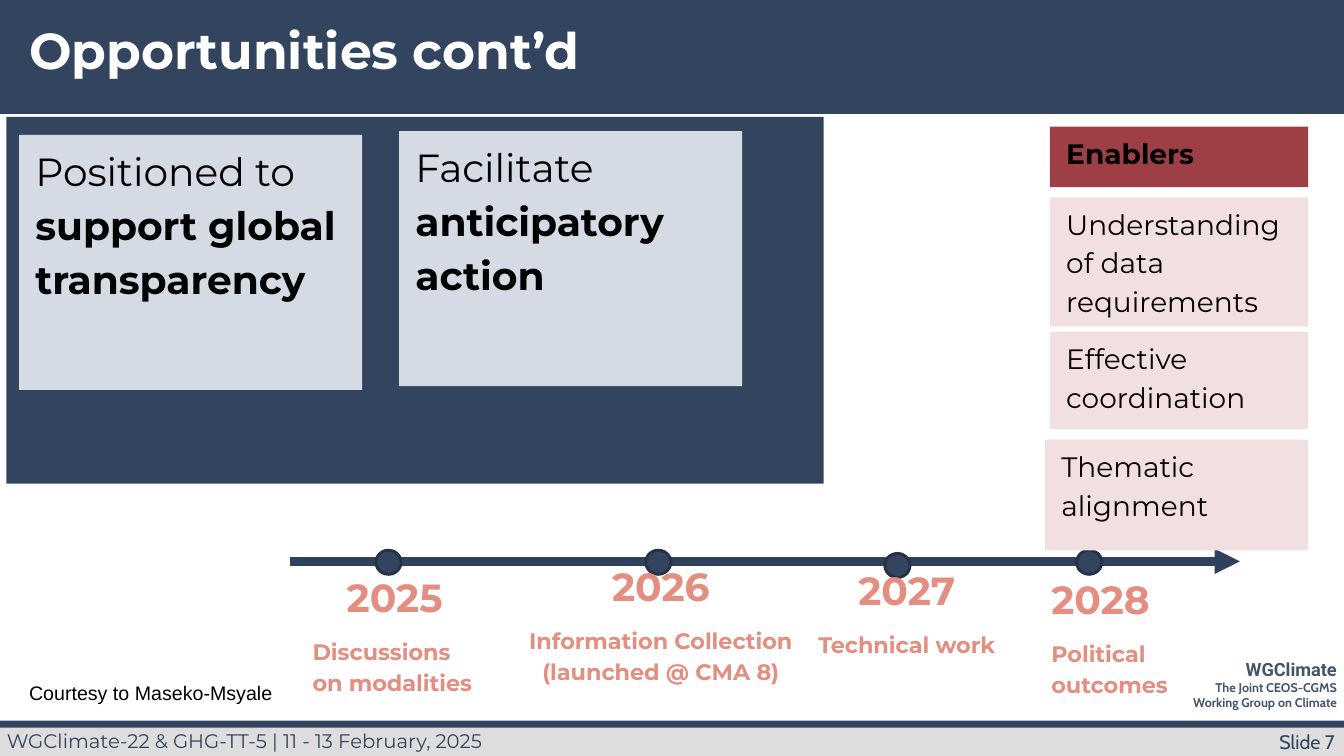
import pptx
import pptx.util
import pptx.dml.color
import pptx.enum.shapes
import pptx.enum.text
import pptx.oxml.ns
from lxml import etree
from dataclasses import dataclass

Pt = pptx.util.Pt
SHAPE = pptx.enum.shapes.MSO_SHAPE
ALIGN = pptx.enum.text.PP_ALIGN


@dataclass(frozen=True)
class Theme:
    navy: str = "33445F"
    axis: str = "2F415D"
    dot_edge: str = "253145"
    slate: str = "44546A"
    grey: str = "DDDDDD"
    pale_blue: str = "D5DBE5"
    pale_red: str = "F2DFE0"
    red: str = "9D3F44"
    coral: str = "E38E80"
    white: str = "FFFFFF"
    black: str = "000000"
    font: str = "Montserrat"
    title: int = 36
    large: int = 28
    medium: int = 20
    label: int = 16
    small: int = 14
    group: int = 13
    tiny: int = 9


THEME = Theme()


def rgb(value):
    return pptx.dml.color.RGBColor.from_string(value)


def add_text(tf, text, size=THEME.small, color=THEME.black, font=THEME.font,
             bold=False, align=ALIGN.LEFT, spacing=None, before=0, indent=0,
             same_line=False):
    """Add text as a new paragraph, or to the last one if same_line is set."""
    p = tf.paragraphs[-1]
    if p.runs and not same_line:
        p = tf.add_paragraph()
    if not same_line:
        p.alignment = align
        p.space_before = Pt(before)
        if spacing:
            p.line_spacing = spacing
        if indent:
            p._p.get_or_add_pPr().set("marL", str(Pt(indent)))
    r = p.add_run()
    r.text = text
    r.font.name = font
    r.font.size = Pt(size)
    r.font.bold = bold
    r.font.color.rgb = rgb(color)


class SlideBuilder:
    def __init__(self, slide, theme):
        self.s = slide
        self.theme = theme
        self.body = dict(spacing=1.15, indent=4.5)

    def shape(self, x, y, w, h, fill, kind=SHAPE.RECTANGLE, edge=None):
        sp = self.s.shapes.add_shape(kind, Pt(x), Pt(y), Pt(w), Pt(h))
        sp.shadow.inherit = False
        sp.fill.solid()
        sp.fill.fore_color.rgb = rgb(fill)
        if edge:
            sp.line.color.rgb = rgb(edge)
            sp.line.width = Pt(2)
        else:
            sp.line.fill.background()
        return sp

    def card(self, x, y, w, h, fill, text, size, bold=False, strong=None):
        tf = self.shape(x, y, w, h, fill).text_frame
        tf.word_wrap = True
        tf.vertical_anchor = pptx.enum.text.MSO_ANCHOR.TOP
        add_text(tf, text, size=size, bold=bold, **self.body)
        if strong:
            add_text(tf, strong, size=size, bold=True, same_line=True)

    def text_box(self, x, y, w, h, margin=3.6):
        tf = self.s.shapes.add_textbox(Pt(x), Pt(y), Pt(w), Pt(h)).text_frame
        tf.word_wrap = True
        tf.margin_top = tf.margin_bottom = Pt(margin)
        return tf

    def arrow(self, x1, x2, y, color, width):
        line = self.s.shapes.add_connector(
            pptx.enum.shapes.MSO_CONNECTOR.STRAIGHT, Pt(x1), Pt(y), Pt(x2), Pt(y))
        line.line.color.rgb = rgb(color)
        line.line.width = Pt(width)
        qn = pptx.oxml.ns.qn
        etree.SubElement(line.line._get_or_add_ln(), qn("a:tailEnd"), type="triangle")
        etree.SubElement(line._element.spPr, qn("a:effectLst"))

    def milestone(self, x, y, w, year, text, year_align, text_align):
        tf = self.text_box(x, y, w, 41)
        style = dict(color=self.theme.coral, bold=True, **self.body)
        add_text(tf, year, size=self.theme.large, align=year_align, **style)
        add_text(tf, text, size=self.theme.label, align=text_align, before=10, **style)


def main():
    prs = pptx.Presentation()
    prs.slide_width, prs.slide_height = Pt(960), Pt(540)
    t = THEME
    b = SlideBuilder(prs.slides.add_slide(prs.slide_layouts[6]), t)

    # Header and footer bands
    b.shape(0, 0, 960, 81.4, t.navy)
    b.shape(0, 517.7, 960, 22.3, t.grey)
    b.shape(0, 514.8, 960, 5, t.navy)

    # Footer text
    add_text(b.text_box(808.6, 517.7, 151.9, 24.5), "Slide 7",
             font="Cabin", color=t.navy, align=ALIGN.RIGHT)
    add_text(b.text_box(-2.2, 517, 463, 24.5),
             "WGClimate-22 & GHG-TT-5 | 11 - 13 February, 2025", color=t.navy)
    tf = b.text_box(830.9, 463, 131, 51.8, margin=7.2)
    add_text(tf, "WGClimate", size=t.group, font="Roboto", bold=True,
             color=t.slate, align=ALIGN.RIGHT)
    add_text(tf, "The Joint CEOS-CGMS Working Group on Climate", size=t.tiny,
             font="Cabin", bold=True, color=t.slate, align=ALIGN.RIGHT)

    # Title
    add_text(b.text_box(13.7, 15.1, 787.7, 61.2), "Opportunities cont’d",
             size=t.title, color=t.white, bold=True, spacing=0.9)

    # Opportunities panel
    b.shape(4.5, 83.5, 583.9, 262, t.navy)
    for x, y, text, strong in (
            (13.7, 96.4, "Positioned to ", "support global transparency"),
            (285.1, 93.7, "Facilitate ", "anticipatory action")):
        b.card(x, y, 245, 182.2, t.pale_blue, text, t.large, strong=strong)

    # Timeline
    b.arrow(207.2, 885.6, 401, t.axis, 6)
    for x, y in ((268.5, 393), (461.2, 393), (632, 395.3), (769, 393)):
        b.shape(x, y, 18, 17.3, t.navy, SHAPE.OVAL, edge=t.dot_edge)
    left, center = ALIGN.LEFT, ALIGN.CENTER
    for milestone in (
            (211.7, 401, 136, "2025", "Discussions on modalities", center, left),
            (363.6, 393.1, 212.4, "2026", "Information Collection (launched @ CMA 8)",
             center, center),
            (566.6, 396, 157.7, "2027", "Technical work", center, center),
            (739.4, 402.5, 146.9, "2028", "Political outcomes", left, left)):
        b.milestone(*milestone)

    # Enablers, all ending at the same right edge
    right = 934.5
    for x, y, h, text, fill, bold in (
            (750, 90.5, 43.2, "Enablers", t.red, True),
            (750, 140.9, 92.2, "Understanding of data requirements", t.pale_red, False),
            (750, 237, 69.3, "Effective coordination", t.pale_red, False),
            (746.5, 314, 79.2, "Thematic alignment", t.pale_red, False)):
        b.card(x, y, right - x, h, fill, text, t.medium, bold=bold)

    # Credit
    add_text(b.text_box(13.7, 483.1, 189.4, 24.5), "Courtesy to Maseko-Msyale",
             font="Arial")

    prs.save("out.pptx")


if __name__ == "__main__":
    main()
